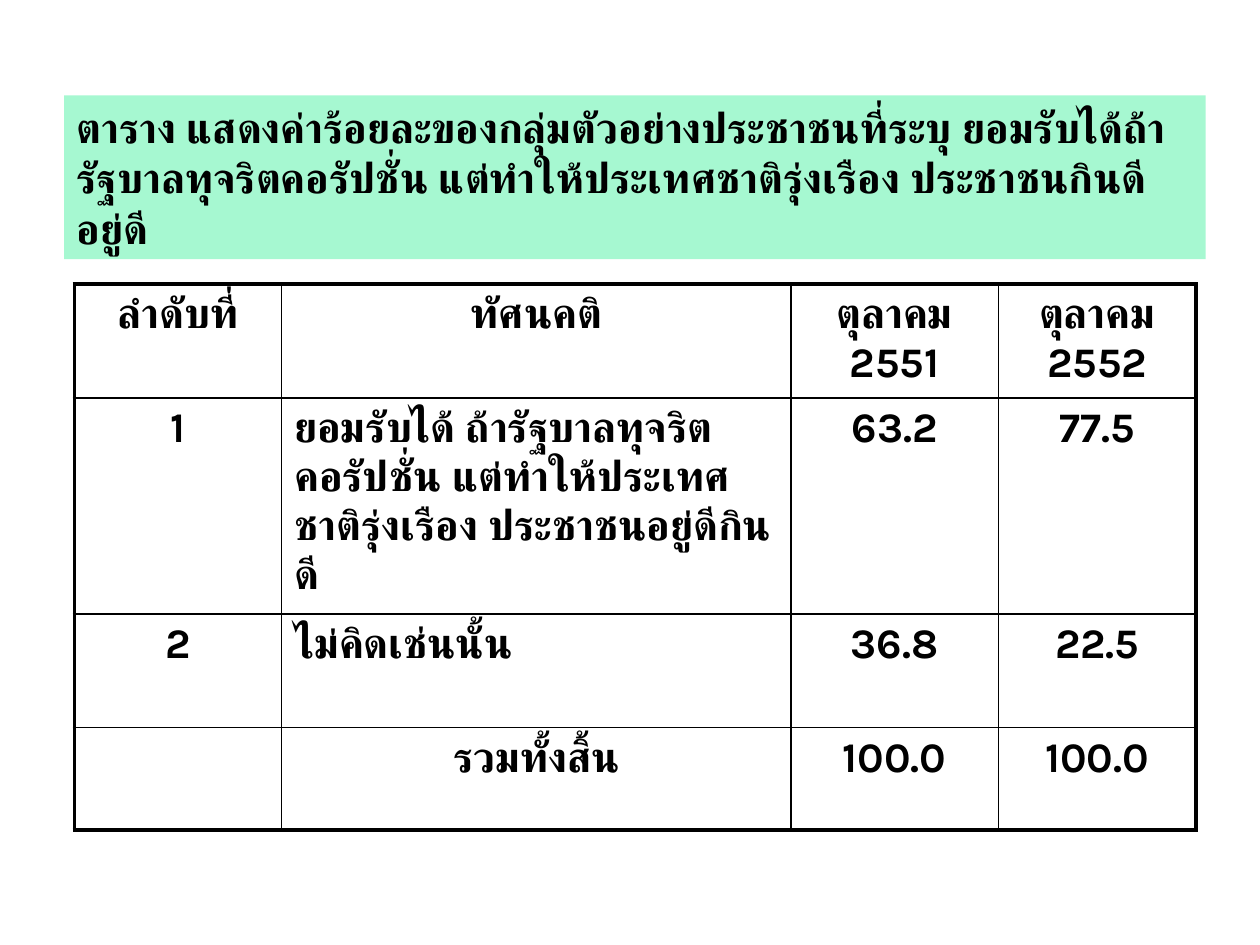
import pptx
import pptx.util
import pptx.dml.color
import pptx.enum.shapes
import pptx.enum.text
import pptx.oxml.ns
import lxml.etree

Pt = pptx.util.Pt
Rgb = pptx.dml.color.RGBColor.from_string
Align = pptx.enum.text.PP_ALIGN
qn = pptx.oxml.ns.qn
colors = {"ink": "000000", "mint": "A6F8D1", "paper": "FFFFFF"}
font = "Karla"


def write(frame, text, align, before):
    para = frame.paragraphs[0]
    para.alignment = align
    para.space_before = Pt(before)
    run = para.add_run()
    run.text = text
    run.font.name = font
    run.font.size = Pt(24)
    run.font.bold = True
    run.font.color.rgb = Rgb(colors["ink"])
    lxml.etree.SubElement(run._r.get_or_add_rPr(), qn("a:cs"), typeface=font)


def border(cell, side, width):
    props = cell._tc.get_or_add_tcPr()
    line = lxml.etree.SubElement(props, qn("a:ln" + side), w=str(Pt(width)))
    fill = lxml.etree.SubElement(line, qn("a:solidFill"))
    lxml.etree.SubElement(fill, qn("a:srgbClr"), val=colors["ink"])


deck = pptx.Presentation()
deck.slide_width, deck.slide_height = Pt(720), Pt(540)
slide = deck.slides.add_slide(deck.slide_layouts[6])

# Title band
band = slide.shapes.add_shape(
    pptx.enum.shapes.MSO_SHAPE.RECTANGLE, Pt(36.75), Pt(54.5), Pt(652.25), Pt(93.6))
band.shadow.inherit = False
band.fill.solid()
band.fill.fore_color.rgb = Rgb(colors["mint"])
band.line.fill.background()
band.text_frame.word_wrap = True
band.text_frame.auto_size = pptx.enum.text.MSO_AUTO_SIZE.SHAPE_TO_FIT_TEXT
band.text_frame.vertical_anchor = pptx.enum.text.MSO_ANCHOR.TOP
write(band.text_frame,
      "ตาราง แสดงค่าร้อยละของกลุ่มตัวอย่างประชาชนที่ระบุ ยอมรับได้ถ้ารัฐบาลทุจริตคอรัปชั่น "
      "แต่ทำให้ประเทศชาติรุ่งเรือง ประชาชนกินดีอยู่ดี", Align.LEFT, 12)

# Survey table
rows = [
    ["ลำดับที่", "ทัศนคติ", "ตุลาคม 2551", "ตุลาคม 2552"],
    ["1", "ยอมรับได้ ถ้ารัฐบาลทุจริตคอรัปชั่น แต่ทำให้ประเทศชาติรุ่งเรือง ประชาชนอยู่ดีกินดี",
     "63.2", "77.5"],
    ["2", "ไม่คิดเช่นนั้น", "36.8", "22.5"],
    ["", "รวมทั้งสิ้น", "100.0", "100.0"],
]
widths = [118.5, 291, 118.5, 113]
heights = [65.3, 123.4, 64.8, 58.5]
grid = slide.shapes.add_table(
    len(rows), len(widths), Pt(42.5), Pt(162.25), Pt(sum(widths)), Pt(sum(heights))).table
for col, width in zip(grid.columns, widths):
    col.width = Pt(width)
for row, height in zip(grid.rows, heights):
    row.height = Pt(height)

last = len(rows) - 1
for r, row in enumerate(rows):
    for c, text in enumerate(row):
        cell = grid.cell(r, c)
        # Thick outer frame, thin inner lines
        edges = {"L": c == 0, "R": c == last, "T": r == 0, "B": r == last}
        for side, outer in edges.items():
            border(cell, side, 2.25 if outer else 1)
        cell.fill.solid()
        cell.fill.fore_color.rgb = Rgb(colors["paper"])
        if text:
            left = c == 1 and r in (1, 2)
            write(cell.text_frame, text, Align.LEFT if left else Align.CENTER, 4.8)

deck.save("out.pptx")
